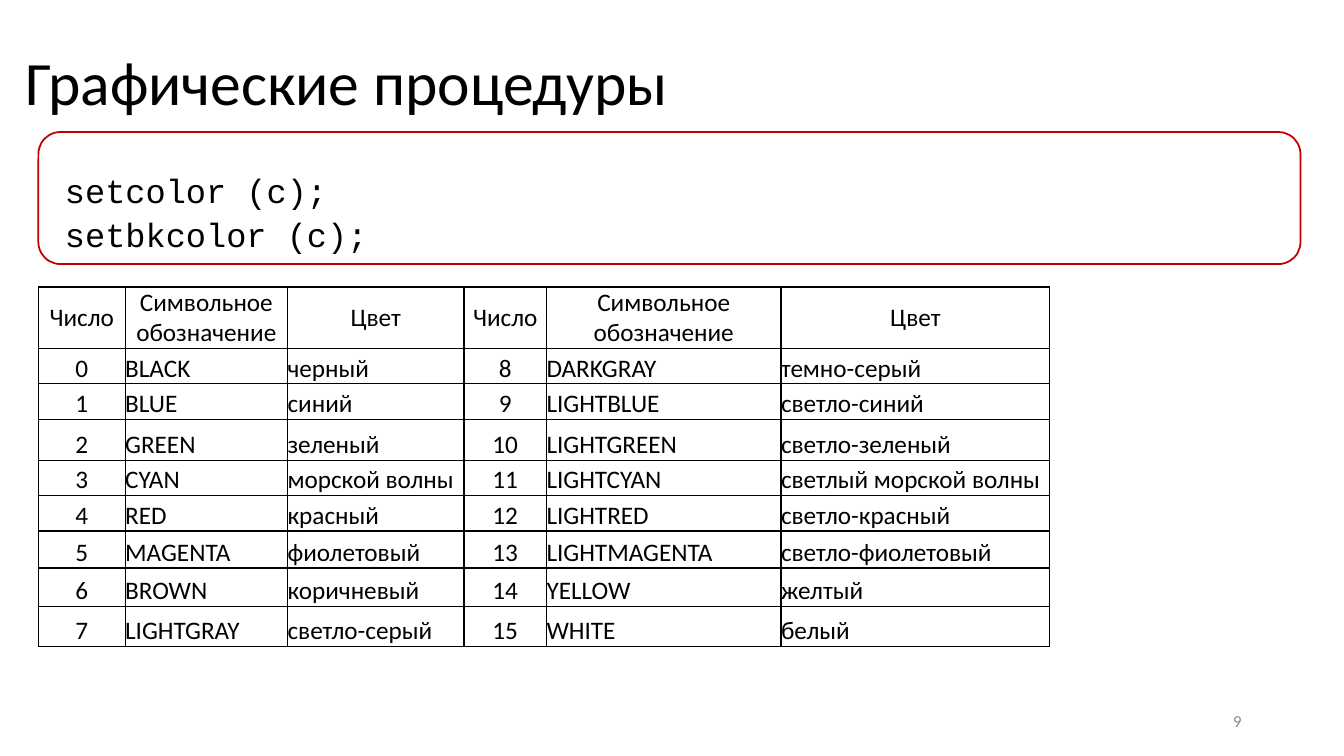
"""Build the slide on graphics procedures with its table of colour constants."""
from lxml.etree import SubElement
from pptx import Presentation
from pptx.dml.color import RGBColor
from pptx.enum.shapes import MSO_SHAPE
from pptx.enum.text import MSO_ANCHOR, PP_ALIGN
from pptx.oxml.ns import qn
from pptx.util import Pt

TITLE = "Графические процедуры"
PAGE_NUMBER = "9"
PROCEDURES = ["setcolor (с);", "setbkcolor (c);"]
HEADINGS = ["Число", "Символьное обозначение", "Цвет"]
COLOURS = [
    ("BLACK", "черный"),
    ("BLUE", "синий"),
    ("GREEN", "зеленый"),
    ("CYAN", "морской волны"),
    ("RED", "красный"),
    ("MAGENTA", "фиолетовый"),
    ("BROWN", "коричневый"),
    ("LIGHTGRAY", "светло-серый"),
    ("DARKGRAY", "темно-серый"),
    ("LIGHTBLUE", "светло-синий"),
    ("LIGHTGREEN", "светло-зеленый"),
    ("LIGHTCYAN", "светлый морской волны"),
    ("LIGHTRED", "светло-красный"),
    ("LIGHTMAGENTA", "светло-фиолетовый"),
    ("YELLOW", "желтый"),
    ("WHITE", "белый"),
]
COLUMN_WIDTHS = [62, 116, 126, 59, 167.5, 192]
ROW_HEIGHTS = [44, 25.2, 25.2, 29.5, 25.2, 25.2, 26.5, 27.2, 29]

BLACK = RGBColor(0x00, 0x00, 0x00)
WHITE = RGBColor(0xFF, 0xFF, 0xFF)
GRAY = RGBColor(0x8C, 0x8C, 0x8C)
RED = RGBColor(0xC0, 0x00, 0x00)
LEFT = 27.4


def write(para, text, size, color=BLACK, font="Calibri", align=PP_ALIGN.LEFT):
    para.alignment = align
    span = para.add_run()
    span.text = text
    span.font.size = Pt(size)
    span.font.name = font
    span.font.color.rgb = color


def add_text(page, place, text, size, color=BLACK, align=PP_ALIGN.LEFT):
    box = page.shapes.add_textbox(*map(Pt, place))
    frame = box.text_frame
    frame.word_wrap = True
    frame.vertical_anchor = MSO_ANCHOR.MIDDLE
    write(frame.paragraphs[0], text, size, color, align=align)
    return frame.paragraphs[0]


def add_procedures(page):
    panel = page.shapes.add_shape(
        MSO_SHAPE.ROUNDED_RECTANGLE, Pt(LEFT), Pt(94.3), Pt(901.5), Pt(94.3))
    panel.shadow.inherit = False
    panel.fill.solid()
    panel.fill.fore_color.rgb = WHITE
    panel.line.color.rgb = RED
    panel.line.width = Pt(1.25)
    frame = panel.text_frame
    frame.word_wrap = True
    frame.vertical_anchor = MSO_ANCHOR.MIDDLE
    frame.margin_left, frame.margin_top = Pt(14.4), Pt(20)
    frame.margin_right, frame.margin_bottom = Pt(20), Pt(0)
    for index, procedure in enumerate(PROCEDURES):
        para = frame.paragraphs[0] if index == 0 else frame.add_paragraph()
        if index:
            para.space_before = Pt(2.4)
        write(para, procedure, 24, font="Courier New")


def add_borders(cell):
    properties = cell._tc.get_or_add_tcPr()
    for index, side in enumerate(("lnL", "lnR", "lnT", "lnB")):
        border = properties.makeelement(qn(f"a:{side}"), {"w": str(Pt(1))})
        fill = SubElement(border, qn("a:solidFill"))
        SubElement(fill, qn("a:srgbClr"), val=str(BLACK))
        properties.insert(index, border)


def add_colour_table(page):
    half = len(COLOURS) // 2
    rows = [HEADINGS * 2]
    for number in range(half):
        rows.append([text for code in (number, number + half)
                     for text in (str(code), *COLOURS[code])])
    table = page.shapes.add_table(
        len(rows), len(COLUMN_WIDTHS), Pt(LEFT), Pt(205),
        Pt(sum(COLUMN_WIDTHS)), Pt(sum(ROW_HEIGHTS))).table
    for column, width in zip(table.columns, COLUMN_WIDTHS):
        column.width = Pt(width)
    for row, height in zip(table.rows, ROW_HEIGHTS):
        row.height = Pt(height)
    for row_index, texts in enumerate(rows):
        for column_index, text in enumerate(texts):
            cell = table.cell(row_index, column_index)
            cell.margin_left = cell.margin_right = Pt(0)
            cell.margin_top = cell.margin_bottom = Pt(0)
            heading = row_index == 0
            cell.vertical_anchor = MSO_ANCHOR.MIDDLE if heading else MSO_ANCHOR.BOTTOM
            cell.fill.background()
            add_borders(cell)
            centred = heading or column_index % len(HEADINGS) == 0
            write(cell.text_frame.paragraphs[0], text, 18,
                  align=PP_ALIGN.CENTER if centred else PP_ALIGN.LEFT)


def main():
    deck = Presentation()
    deck.slide_width, deck.slide_height = Pt(960), Pt(540)
    page = deck.slides.add_slide(deck.slide_layouts[6])
    title = add_text(page, (11.5, 8.6, 828, 104.4), TITLE, 44)
    title.line_spacing = 0.9
    add_text(page, (678, 500.5, 216, 28.8), PAGE_NUMBER, 12, GRAY, PP_ALIGN.RIGHT)
    add_procedures(page)
    add_colour_table(page)
    deck.save("out.pptx")


if __name__ == "__main__":
    main()
